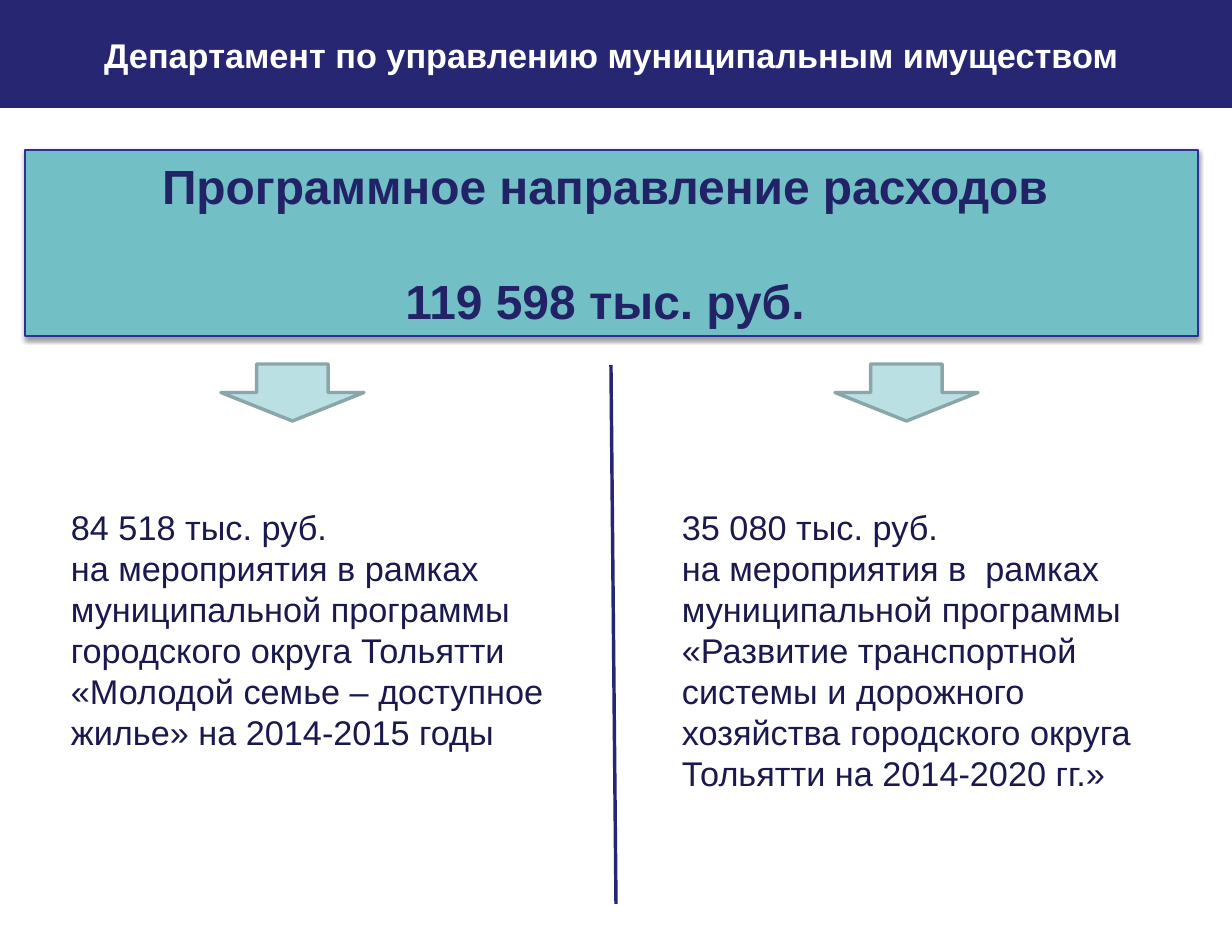
from lxml import etree
from pptx import Presentation, util as u
from pptx.dml.color import RGBColor
from pptx.enum import shapes, text
from pptx.oxml import parse_xml
from pptx.oxml.ns import nsdecls, qn

NAVY = RGBColor(0x26, 0x26, 0x73)
EDGE = RGBColor(0x2F, 0x2F, 0x98)
TEAL = RGBColor(0x72, 0xBF, 0xC5)
PALE = RGBColor(0xBB, 0xE0, 0xE3)
GREY = RGBColor(0x8A, 0xA6, 0xA8)
DEEP = RGBColor(0x22, 0x22, 0x67)
INK = RGBColor(0x19, 0x19, 0x4D)
WHITE = RGBColor(0xFF, 0xFF, 0xFF)

SHADE = (
    f'<a:effectLst {nsdecls("a")}>'
    '<a:outerShdw blurRad="39370" dist="20320" dir="5400000" rotWithShape="0">'
    '<a:srgbClr val="000000"><a:alpha val="38000"/></a:srgbClr>'
    '</a:outerShdw></a:effectLst>'
)


class Page:
    face = "Arial"
    scale = 914400 / 123.2

    def __init__(self, wide, high):
        self.deck = Presentation()
        self.deck.slide_width = self.px(wide)
        self.deck.slide_height = self.px(high)
        self.slide = self.deck.slides.add_slide(self.deck.slide_layouts[6])

    def px(self, size):
        return u.Emu(round(size * self.scale))

    def shape(self, kind, area, fill, edge=None, width=0):
        item = self.slide.shapes.add_shape(kind, *map(self.px, area))
        item.shadow.inherit = False
        item.fill.solid()
        item.fill.fore_color.rgb = fill
        if edge is None:
            item.line.fill.background()
        else:
            item.line.color.rgb = edge
            item.line.width = u.Pt(width)
        return item

    def shade(self, item):
        props = item._element.spPr
        props.remove(props.find(qn("a:effectLst")))
        props.append(parse_xml(SHADE))

    def rule(self, ends, tint, width):
        line = self.slide.shapes.add_connector(
            shapes.MSO_CONNECTOR.STRAIGHT, *map(self.px, ends))
        line.line.color.rgb = tint
        line.line.width = u.Pt(width)
        etree.SubElement(line._element.spPr, qn("a:effectLst"))

    def box(self, area):
        return self.slide.shapes.add_textbox(*map(self.px, area))

    def label(self, item, lines, inset, font, para, anchor, gap=0):
        frame = item.text_frame
        frame.word_wrap = True
        frame.vertical_anchor = anchor
        for side, size in zip(("left", "top", "right", "bottom"), inset):
            setattr(frame, f"margin_{side}", self.px(size))
        for row, line in enumerate(lines):
            part = frame.add_paragraph() if row else frame.paragraphs[0]
            part.text = line
            for key, value in para.items():
                setattr(part, key, value)
            if row and gap:
                part.space_before = u.Pt(gap)
            self.style(part.font, font)

    def style(self, font, form):
        for key, value in {"name": self.face, **form}.items():
            if key == "color":
                font.color.rgb = value
            else:
                setattr(font, key, value)


def main():
    page = Page(1232, 951)
    kind = shapes.MSO_SHAPE
    mid = text.MSO_ANCHOR.MIDDLE
    top = text.MSO_ANCHOR.TOP
    center = text.PP_ALIGN.CENTER

    title = page.shape(kind.RECTANGLE, (0, 0, 1232, 108), NAVY)
    page.label(title, ["Департамент по управлению муниципальным имуществом"],
               (12, 15, 21, 6),
               {"size": u.Pt(20), "bold": True, "color": WHITE},
               {"alignment": center, "line_spacing": 0.8}, mid)

    page.rule((611, 365, 616, 904), NAVY, 2)

    total = page.shape(kind.RECTANGLE, (25, 150, 1173, 186), TEAL, EDGE, 0.75)
    page.shade(total)
    page.label(total, ["Программное направление расходов", "119 598 тыс. руб."],
               (12, 6, 25, 6),
               {"size": u.Pt(28), "bold": True, "color": DEEP},
               {"alignment": center, "line_spacing": u.Pt(33.6)}, mid, 33.6)

    parts = [
        (59, 349, 221, "84 518 тыс. руб.",
         "на мероприятия в рамках муниципальной программы городского округа "
         "Тольятти «Молодой семье – доступное жилье» на 2014-2015 годы"),
        (670, 361, 835, "35 080 тыс. руб.",
         "на мероприятия в  рамках муниципальной программы «Развитие "
         "транспортной системы и дорожного хозяйства городского округа "
         "Тольятти на 2014-2020 гг.»"),
    ]
    for left, high, tip, cost, goal in parts:
        page.label(page.box((left, 471, 499, high)), [cost, goal],
                   (12, 35, 8, 6), {"size": u.Pt(20), "color": INK},
                   {"line_spacing": u.Pt(24)}, top)
        page.shape(kind.DOWN_ARROW, (tip, 364, 143, 57), PALE, GREY, 2)

    page.deck.save("out.pptx")


if __name__ == "__main__":
    main()
